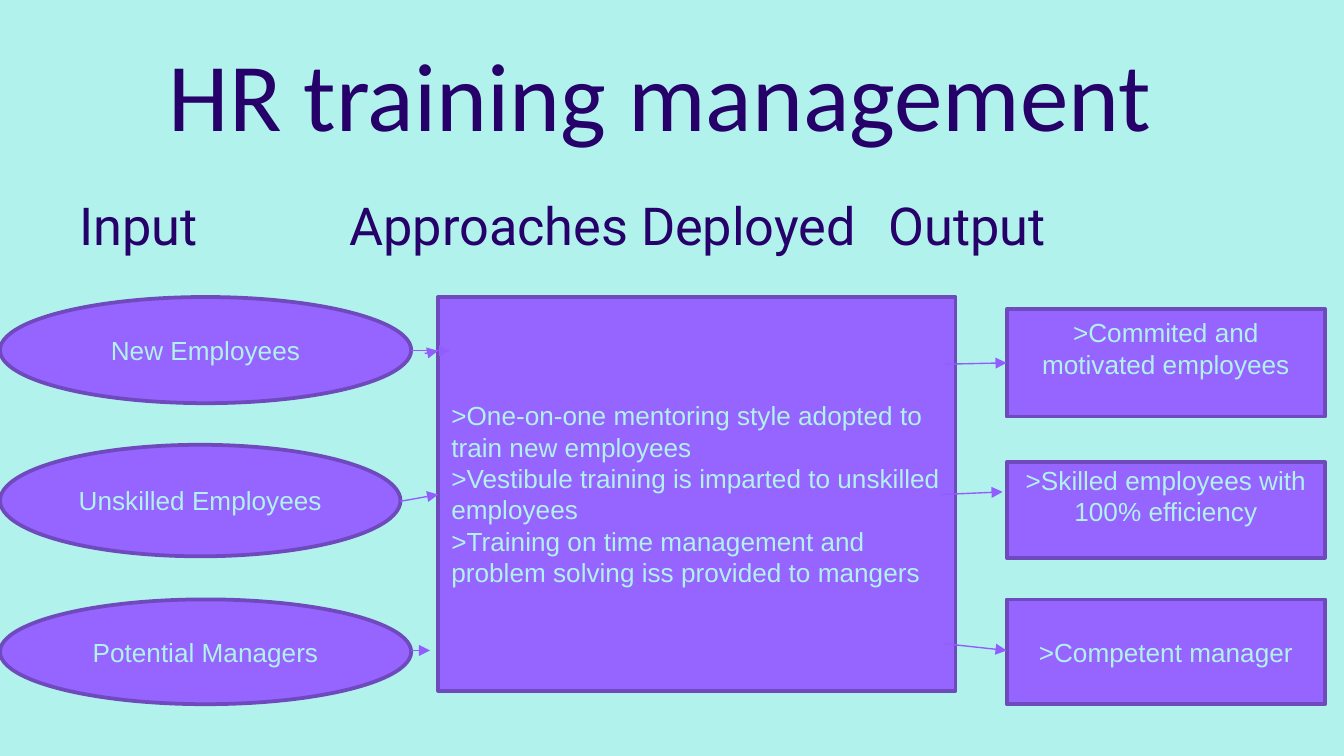
from lxml.etree import SubElement
from pptx import Presentation
from pptx.dml.color import RGBColor
from pptx.enum.shapes import MSO_CONNECTOR, MSO_SHAPE
from pptx.enum.text import MSO_ANCHOR, PP_ALIGN
from pptx.oxml.ns import qn
from pptx.util import Inches, Pt

BACK, INK = "B2F2ED", "26016A"
FILL, EDGE, ARROW = "9664FF", "6F4ABD", "915EFD"
LINE_HEIGHT = 0.22  # one line of 14 pt body text


def rgb(value):
    return RGBColor.from_string(value)


def add_run(p, text, size, font, color):
    r = p.add_run()
    r.text = text
    r.font.size = Pt(size)
    r.font.name = font
    r.font.color.rgb = rgb(color)


def add_textbox(s, box, anchor):
    tf = s.shapes.add_textbox(*map(Inches, box)).text_frame
    tf.word_wrap = True
    tf.vertical_anchor = anchor
    return tf


def add_node(s, kind, box, lines, align=PP_ALIGN.CENTER, raised=False):
    sp = s.shapes.add_shape(kind, *map(Inches, box))
    sp.shadow.inherit = False
    sp.fill.solid()
    sp.fill.fore_color.rgb = rgb(FILL)
    sp.line.color.rgb = rgb(EDGE)
    sp.line.width = Pt(2)
    tf = sp.text_frame
    tf.word_wrap = True
    tf.vertical_anchor = MSO_ANCHOR.MIDDLE
    if raised:  # centre the text half a line above the middle
        tf.margin_top, tf.margin_bottom = 0, Inches(LINE_HEIGHT)
    for i, line in enumerate(lines):
        p = tf.add_paragraph() if i else tf.paragraphs[0]
        p.alignment = align
        add_run(p, line, 14, "Arial", BACK)


def add_arrow(s, x1, y1, x2, y2):
    c = s.shapes.add_connector(MSO_CONNECTOR.STRAIGHT, *map(Inches, (x1, y1, x2, y2)))
    c.line.color.rgb = rgb(ARROW)
    c.line.width = Pt(0.75)
    SubElement(c.line._get_or_add_ln(), qn("a:tailEnd"), type="triangle")
    SubElement(c._element.spPr, qn("a:effectLst"))


def add_title(s, box):
    p = add_textbox(s, box, MSO_ANCHOR.BOTTOM).paragraphs[0]
    p.alignment = PP_ALIGN.CENTER
    p.line_spacing = 0.9
    add_run(p, "HR training management", 52, "Calibri", INK)


def add_headings(s, box, tabs):
    tf = add_textbox(s, box, MSO_ANCHOR.TOP)
    tf.margin_left = Inches(0.59)
    p = tf.paragraphs[0]
    p.space_before = Pt(7.5)
    tab_list = SubElement(p._p.get_or_add_pPr(), qn("a:tabLst"))
    for pos in tabs:
        SubElement(tab_list, qn("a:tab"), pos=str(Inches(pos)), algn="l")
    add_run(p, "Input\tApproaches Deployed\tOutput", 28, "Roboto", INK)


def add_inputs(s, left, top):
    for text, dy, w, h in (
        ("New Employees", 0, 3.06, 0.79),
        ("Unskilled Employees", 1.1, 2.98, 0.83),
        ("Potential Managers", 2.25, 3.06, 0.78),
    ):
        add_node(s, MSO_SHAPE.OVAL, (left, top + dy, w, h), [text])


def add_approaches(s, box):
    add_node(s, MSO_SHAPE.RECTANGLE, box, [
        ">One-on-one mentoring style adopted to train new employees",
        ">Vestibule training is imparted to unskilled employees",
        ">Training on time management and problem solving iss provided to mangers",
    ], align=PP_ALIGN.LEFT)


def add_outputs(s, left, top, width):
    for text, dy, h, raised in (
        (">Commited and motivated employees", 0, 0.8, True),
        (">Skilled employees with 100% efficiency", 1.14, 0.71, True),
        (">Competent manager", 2.16, 0.78, False),
    ):
        add_node(s, MSO_SHAPE.RECTANGLE, (left, top + dy, width, h), [text], raised=raised)


def add_arrows(s):
    for ends in (
        # approaches to outputs
        (7.03, 2.71, 7.49, 2.7),
        (7, 3.68, 7.46, 3.66),
        (7.03, 4.79, 7.49, 4.84),
        # inputs to approaches
        (3.16, 2.63, 3.26, 2.61),
        (3.06, 2.61, 3.35, 2.61),
        (2.98, 3.73, 3.26, 3.68),
        (3.06, 4.84, 3.2, 4.84),
    ):
        add_arrow(s, *ends)


def main():
    prs = Presentation()
    prs.slide_width = Inches(10)
    prs.slide_height = prs.slide_width * 9 // 16
    s = prs.slides.add_slide(prs.slide_layouts[6])
    s.background.fill.solid()
    s.background.fill.fore_color.rgb = rgb(BACK)

    add_title(s, (0.25, 0.2, 9.32, 0.98))
    add_headings(s, (0, 1.39, 10, 4.15), tabs=(2.01, 6.02))
    add_inputs(s, 0, 2.21)
    add_approaches(s, (3.26, 2.21, 3.85, 2.93))
    add_outputs(s, 7.49, 2.3, 2.37)
    add_arrows(s)
    prs.save("out.pptx")


if __name__ == "__main__":
    main()
